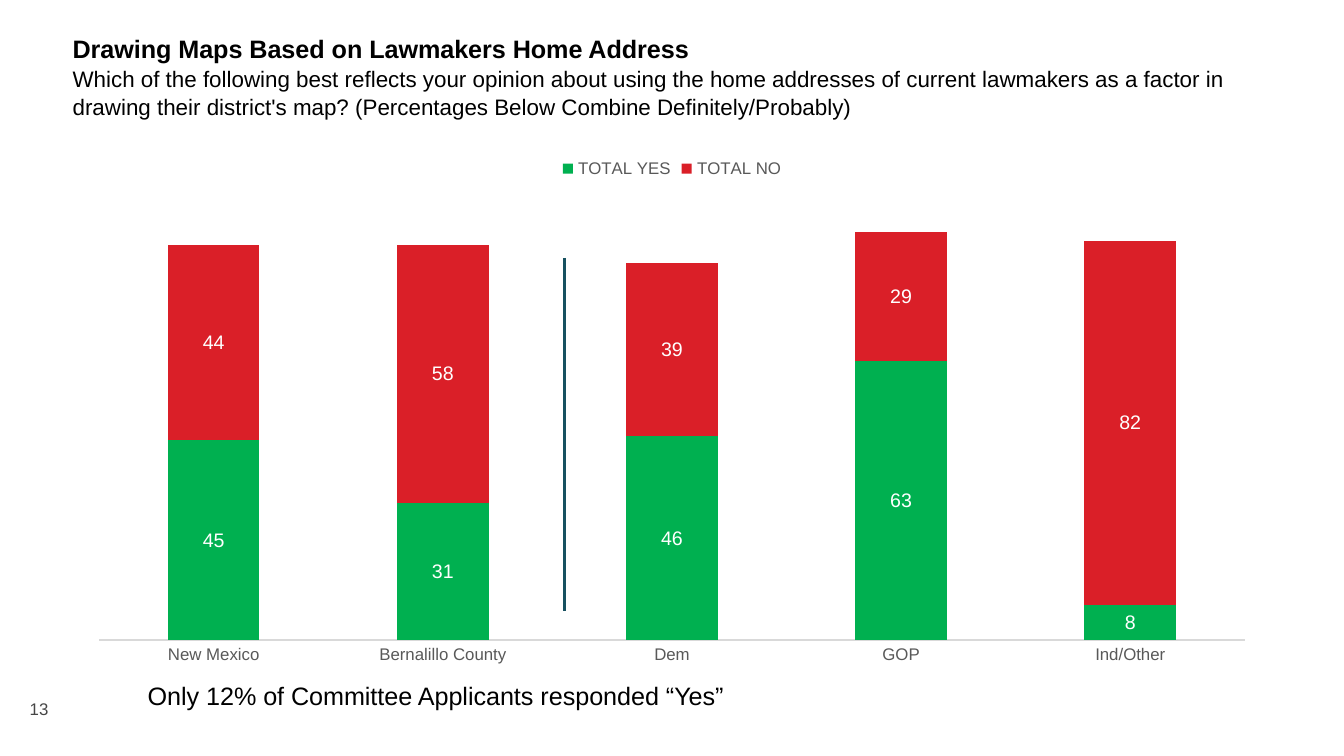
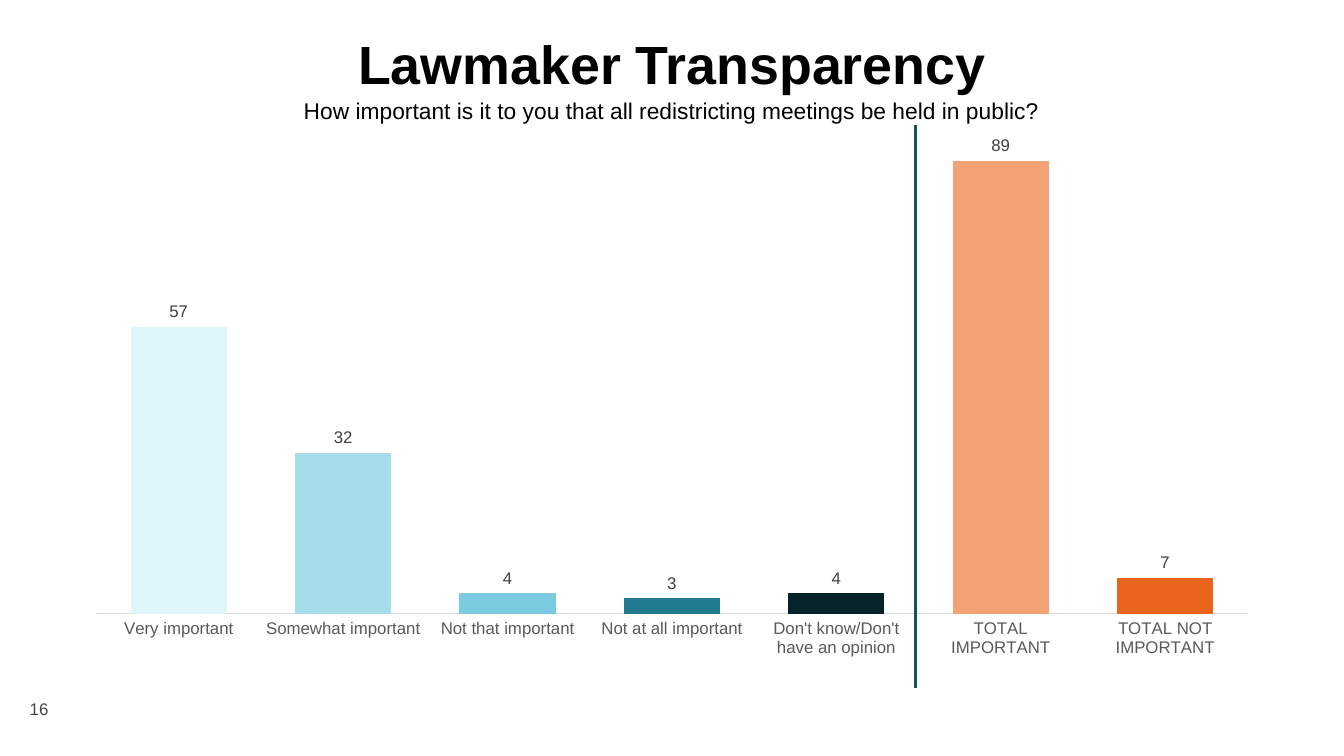
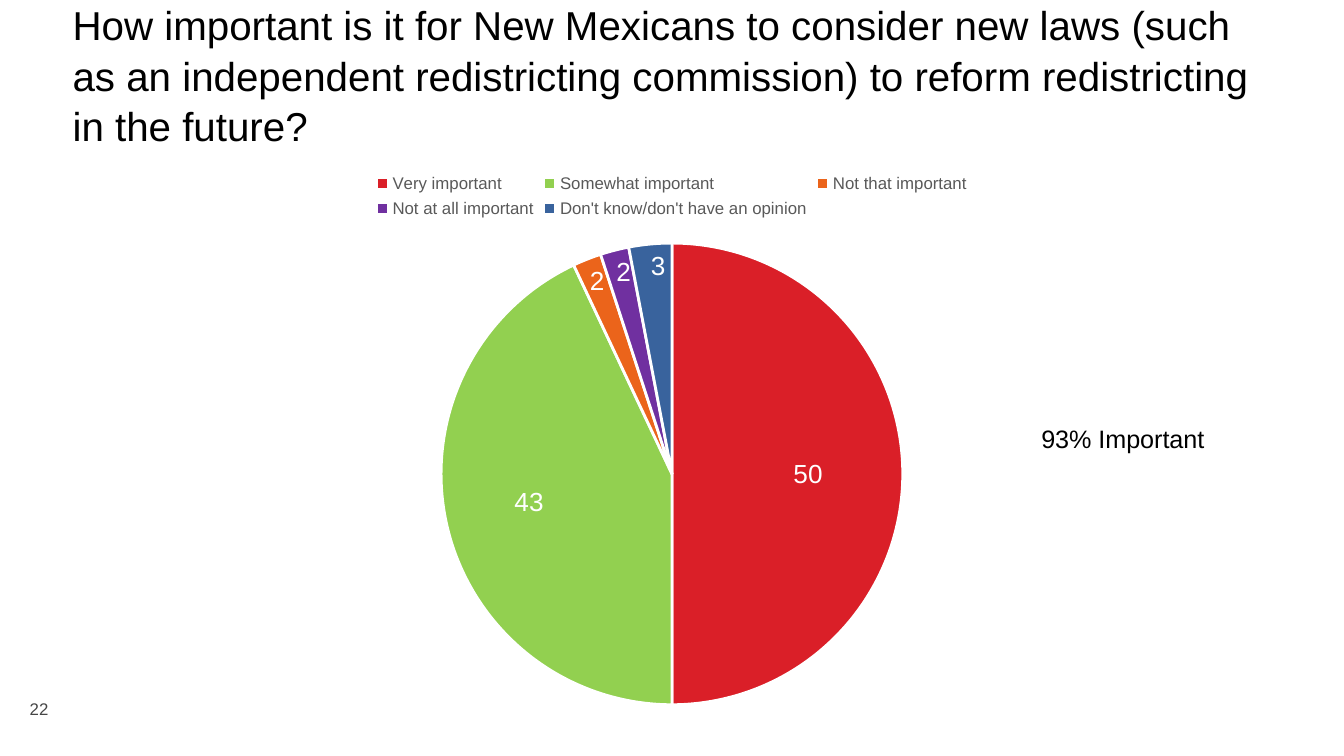
import dataclasses

import lxml.etree
import pptx
import pptx.chart.data
import pptx.dml.color
import pptx.enum.chart
import pptx.enum.shapes
import pptx.enum.text
import pptx.oxml.ns
import pptx.util

Pt = pptx.util.Pt
ALIGN = pptx.enum.text.PP_ALIGN
ANCHOR = pptx.enum.text.MSO_ANCHOR
CHART = pptx.enum.chart.XL_CHART_TYPE
LABEL = pptx.enum.chart.XL_LABEL_POSITION


@dataclasses.dataclass(frozen=True)
class Theme:
    """Colours, type sizes and recurring measures of the deck."""

    font: str = "Arial"
    black: str = "000000"
    white: str = "FFFFFF"
    number: str = "464646"
    label: str = "404040"
    axis_text: str = "595959"
    axis_line: str = "D9D9D9"
    divider: str = "175160"
    green: str = "00B050"
    red: str = "DA1F28"
    orange: str = "EB641B"
    peach: str = "F3A276"
    teals: tuple = ("DEF5FA", "A6DDEA", "7ACBE0", "227A8F", "062329")
    slices: tuple = ("DA1F28", "92D050", "EB641B", "7030A0", "39639D")
    small: float = 9
    stacked_label: float = 10.5
    question: float = 12
    note: float = 13.5
    pie_label: float = 14
    big_question: float = 21.6
    headline: float = 28.8
    line_spacing: float = 1.04


T = Theme()
SLIDE = (720, 405)
TITLE_BOX = (38.9, 14.4, 642.2, 52.6)
NUMBER_BOX = (0, 368.6, 41.8, 22.3)


def rgb(value):
    """Turn a hex string into a colour."""
    return pptx.dml.color.RGBColor.from_string(value)


def lengths(box):
    """Turn a box of numbers into points."""
    return [Pt(v) for v in box]


def set_font(font, size, color, bold=False):
    """Apply the deck's typeface with a size and colour."""
    font.name = T.font
    font.size = Pt(size)
    font.bold = bold
    font.color.rgb = rgb(color)


def set_fill(fill, color):
    """Fill with one solid colour."""
    fill.solid()
    fill.fore_color.rgb = rgb(color)


def add_run(p, text, size, color=T.black, bold=False):
    """Append one formatted run."""
    r = p.add_run()
    r.text = text
    set_font(r.font, size, color, bold)


def add_text(s, box, text, size, color=T.black, align=ALIGN.LEFT, anchor=ANCHOR.TOP):
    """Add a one-paragraph text box."""
    tf = s.shapes.add_textbox(*lengths(box)).text_frame
    tf.word_wrap = True
    tf.vertical_anchor = anchor
    p = tf.paragraphs[0]
    p.alignment = align
    add_run(p, text, size, color)


def add_title(s, box, lines, align=ALIGN.LEFT, anchor=ANCHOR.MIDDLE):
    """Place the title and write its lines of (text, size, bold)."""
    sp = s.shapes.title
    sp.left, sp.top, sp.width, sp.height = lengths(box)
    tf = sp.text_frame
    tf.margin_left = tf.margin_top = tf.margin_right = tf.margin_bottom = 0
    tf.word_wrap = True
    tf.auto_size = pptx.enum.text.MSO_AUTO_SIZE.NONE
    tf.vertical_anchor = anchor
    p = tf.paragraphs[0]
    p.alignment = align
    p.line_spacing = T.line_spacing
    for i, (text, size, bold) in enumerate(lines):
        if i:
            p.add_line_break()
        add_run(p, text, size, bold=bold)


def add_divider(s, x, top, bottom, width):
    """Draw a vertical line between groups of columns."""
    line = s.shapes.add_connector(
        pptx.enum.shapes.MSO_CONNECTOR.STRAIGHT, Pt(x), Pt(top), Pt(x), Pt(bottom))
    line.line.color.rgb = rgb(T.divider)
    line.line.width = Pt(width)
    lxml.etree.SubElement(line._element.spPr, pptx.oxml.ns.qn("a:effectLst"))


def manual_layout(**settings):
    """Build a chart layout element from its settings."""
    qn = pptx.oxml.ns.qn
    layout = lxml.etree.Element(qn("c:layout"))
    manual = lxml.etree.SubElement(layout, qn("c:manualLayout"))
    for tag, value in settings.items():
        lxml.etree.SubElement(manual, qn("c:" + tag)).set("val", str(value))
    return layout


def add_chart(s, box, kind, categories, series, plot_top, plot_height):
    """Add a chart whose plot area has a fixed place in its frame."""
    data = pptx.chart.data.CategoryChartData()
    data.categories = categories
    for name, values in series:
        data.add_series(name, values)
    chart = s.shapes.add_chart(kind, *lengths(box), data).chart
    chart.has_title = False
    chart.has_legend = False
    set_font(chart.font, 10, T.black)
    area = chart._chartSpace.xpath("c:chart/c:plotArea")[0]
    for old in area.xpath("c:layout"):
        area.remove(old)
    area.insert(0, manual_layout(
        layoutTarget="inner", xMode="edge", yMode="edge",
        x=0.02, y=plot_top, w=0.96, h=plot_height))
    return chart


def add_legend(chart):
    """Show the legend above the plot."""
    chart.has_legend = True
    chart.legend.position = pptx.enum.chart.XL_LEGEND_POSITION.TOP
    chart.legend.include_in_layout = False
    set_font(chart.legend.font, T.small, T.axis_text)


def format_columns(chart, maximum, gap, overlap):
    """Style the axes and spacing of a column chart."""
    plot = chart.plots[0]
    plot.vary_by_categories = False
    plot.gap_width = gap
    plot.overlap = overlap
    values = chart.value_axis
    values.visible = False
    values.has_major_gridlines = False
    values.minimum_scale = 0
    values.maximum_scale = maximum
    axis = chart.category_axis
    axis.major_tick_mark = pptx.enum.chart.XL_TICK_MARK.NONE
    axis.format.line.color.rgb = rgb(T.axis_line)
    axis.format.line.width = Pt(0.75)
    set_font(axis.tick_labels.font, T.small, T.axis_text)


def label_series(series, position, size, color):
    """Show the values of a series."""
    labels = series.data_labels
    labels.show_value = True
    labels.position = position
    set_font(labels.font, size, color)


def add_stacked_chart(s, box):
    """Add the yes and no columns for each group of voters."""
    chart = add_chart(
        s, box, CHART.COLUMN_STACKED,
        ["New Mexico", "Bernalillo County", "Dem", "GOP", "Ind/Other"],
        [("TOTAL YES", (45, 31, 46, 63, 8)), ("TOTAL NO", (44, 58, 39, 29, 82))],
        0.1, 0.84)
    format_columns(chart, 100, 150, 100)
    add_legend(chart)
    for series, color in zip(chart.series, (T.green, T.red)):
        set_fill(series.format.fill, color)
        label_series(series, LABEL.CENTER, T.stacked_label, T.white)


def add_importance_chart(s, box):
    """Add the columns of answers and their two totals."""
    chart = add_chart(
        s, box, CHART.COLUMN_CLUSTERED,
        ["Very important", "Somewhat important", "Not that important",
         "Not at all important", "Don't know/Don't have an opinion",
         "TOTAL IMPORTANT", "TOTAL NOT IMPORTANT"],
        [("Series 1", (57, 32, 4, 3, 4, 90, 7))], 0.02, 0.88)
    format_columns(chart, 95, 71, -46)
    series = chart.series[0]
    set_fill(series.format.fill, T.peach)
    for i, color in enumerate((*T.teals, T.peach, T.orange)):
        set_fill(series.points[i].format.fill, color)
    label_series(series, LABEL.OUTSIDE_END, T.small, T.label)
    total = series.points[5].data_label
    add_run(total.text_frame.paragraphs[0], "89", T.small, T.label)
    total.position = LABEL.OUTSIDE_END


def add_importance_pie(s, box):
    """Add the pie of answers, its two large labels moved inwards."""
    chart = add_chart(
        s, box, CHART.PIE,
        ["Very important", "Somewhat important", "Not that important",
         "Not at all important", "Don't know/don't have an opinion"],
        [("Series 1", (50, 43, 2, 2, 3))], 0.15, 0.82)
    add_legend(chart)
    chart.plots[0].vary_by_categories = True
    series = chart.series[0]
    for i, color in enumerate(T.slices):
        point = series.points[i].format
        set_fill(point.fill, color)
        point.line.color.rgb = rgb(T.white)
        point.line.width = Pt(1.5)
    label_series(series, LABEL.INSIDE_END, T.pie_label, T.white)
    for i, (x, y) in enumerate([(-0.06, 0), (0.05, -0.01)]):
        label = series.points[i].data_label
        set_font(label.font, T.pie_label, T.white)
        label.position = LABEL.INSIDE_END
        element = series._element.xpath(f"c:dLbls/c:dLbl[c:idx/@val='{i}']")[0]
        element.insert(1, manual_layout(x=x, y=y))
    for leader in series._element.xpath("c:dLbls/c:showLeaderLines"):
        leader.set("val", "0")


def add_slide(prs, number):
    """Add a title-only slide with its page number."""
    s = prs.slides.add_slide(prs.slide_layouts[5])
    set_fill(s.background.fill, T.white)
    add_text(s, NUMBER_BOX, str(number), T.small, T.number, ALIGN.CENTER, ANCHOR.MIDDLE)
    return s


def home_address_slide(prs):
    """Build the slide on lawmakers' home addresses."""
    s = add_slide(prs, 13)
    add_title(s, TITLE_BOX, [
        ("Drawing Maps Based on Lawmakers Home Address", T.note, True),
        ("Which of the following best reflects your opinion about using the home "
         "addresses of current lawmakers as a factor in drawing their district's map? "
         "(Percentages Below Combine Definitely/Probably)", T.question, False)])
    add_stacked_chart(s, (40.3, 77, 639.4, 283))
    add_divider(s, 302.4, 138.2, 327.6, 1.75)
    add_text(s, (72, 360.7, 468.7, 23.8),
             "Only 12% of Committee Applicants responded “Yes”", T.note)


def transparency_slide(prs):
    """Build the slide on public meetings."""
    s = add_slide(prs, 16)
    add_title(s, TITLE_BOX, [
        ("Lawmaker Transparency", T.headline, True),
        ("How important is it to you that all redistricting meetings be held in public?",
         12.2, False)], ALIGN.CENTER)
    add_importance_chart(s, (38.9, 67, 642.2, 290.9))
    add_divider(s, 490.3, 67, 368.6, 1.5)


def reform_slide(prs):
    """Build the slide on redistricting reform."""
    s = add_slide(prs, 22)
    left, top, width, height = TITLE_BOX
    add_title(s, (left, top + 13, width, height), [
        ("How important is it for New Mexicans to consider new laws (such as an "
         "independent redistricting commission) to reform redistricting in the future?",
         T.big_question, False)], anchor=ANCHOR.BOTTOM)
    add_importance_pie(s, (38.9, 85, 642.2, 301.7))
    add_text(s, (550.8, 223.2, 117.4, 23.8), "93% Important", T.note)


def main():
    """Build the deck and save it."""
    prs = pptx.Presentation()
    prs.slide_width, prs.slide_height = lengths(SLIDE)
    for build in (home_address_slide, transparency_slide, reform_slide):
        build(prs)
    prs.save("out.pptx")


if __name__ == "__main__":
    main()
